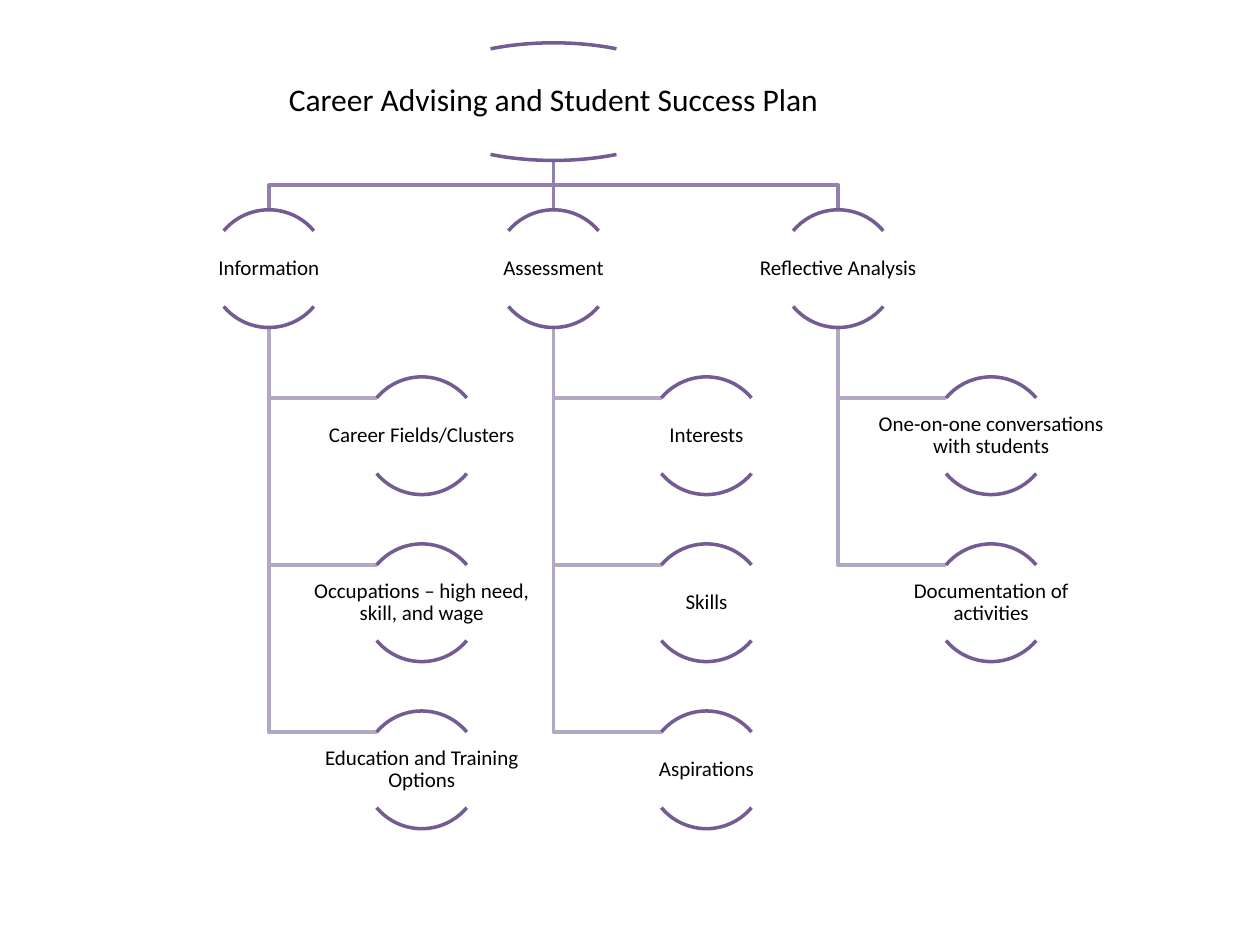
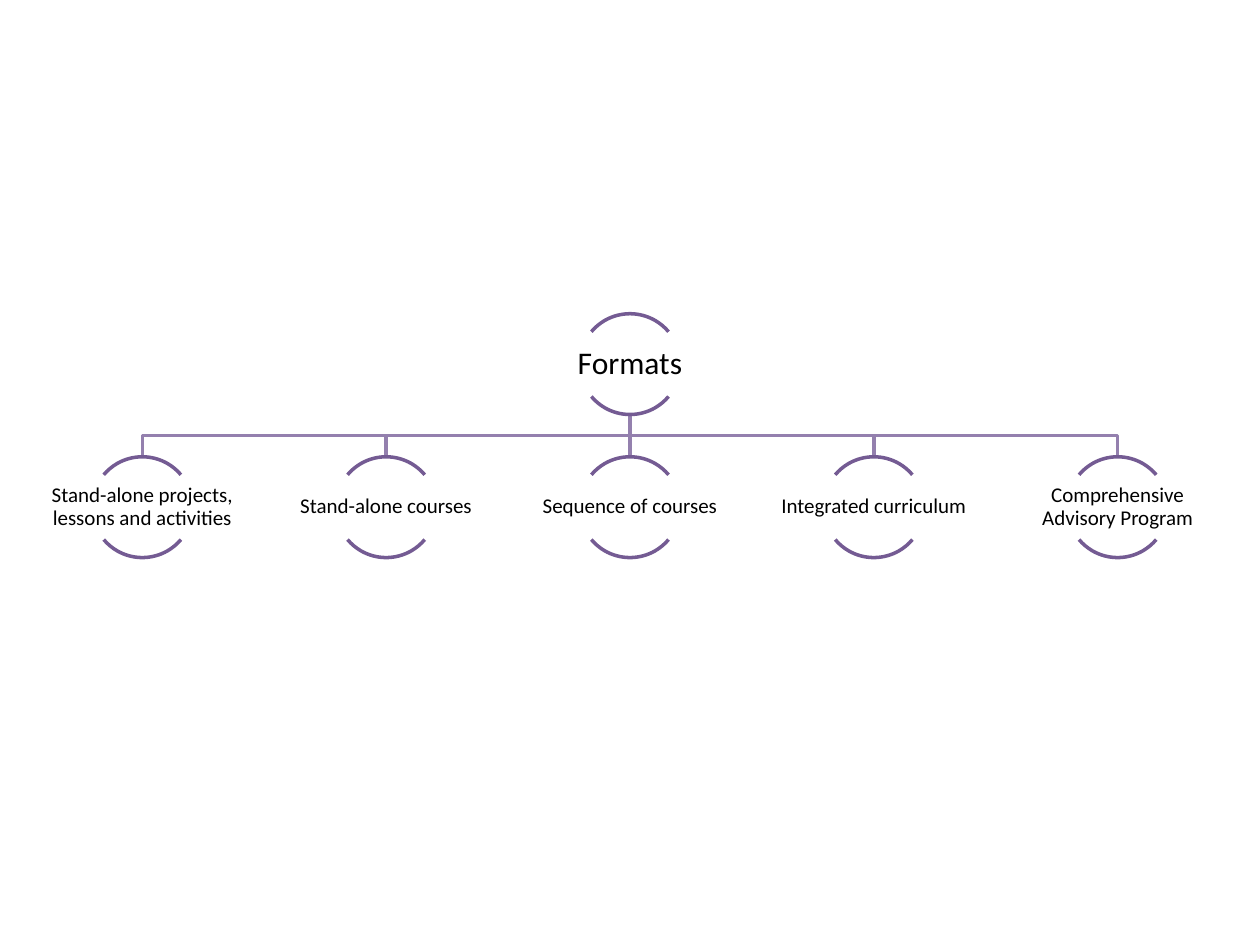
from pptx import Presentation
from pptx.dml.color import RGBColor
from pptx.enum.shapes import MSO_CONNECTOR, MSO_SHAPE
from pptx.enum.text import MSO_ANCHOR, PP_ALIGN
from pptx.oxml.ns import qn
from pptx.util import Inches, Pt
from lxml import etree

ARC = MSO_SHAPE.ARC
STRAIGHT = MSO_CONNECTOR.STRAIGHT
MIDDLE = MSO_ANCHOR.MIDDLE
CENTER = PP_ALIGN.CENTER

ARC_COLOR = RGBColor(0x74, 0x5B, 0x93)
BRANCH_COLOR = RGBColor(0x94, 0x80, 0xAE)
LEAF_COLOR = RGBColor(0xB3, 0xA8, 0xC4)
TEXT_COLOR = RGBColor(0x00, 0x00, 0x00)
FONT = "Calibri"
LINE_WIDTH = Pt(2)
TEXT_INSET = Inches(0.01)
ROOT_SIZE, NODE_SIZE = Pt(18), Pt(12)

UNIT = Inches(0.1)

# Proportions of a chart, in node diameters.
COLUMN_PITCH = 2.42
ROW_PITCH = 1.42
LEAF_INDENT = 1.3
LABEL_WIDTH = 2
LABEL_TOP = 0.18
ARC_HALF_CHORD = 0.38
ARC_ANGLES = ((132, 192), (24, 84))

PLAN = ("Career Advising and Student Success Plan", [
    ("Information", ["Career Fields/Clusters",
                     "Occupations – high need, skill, and wage",
                     "Education and Training Options"]),
    ("Assessment", ["Interests", "Skills", "Aspirations"]),
    ("Reflective Analysis", ["One-on-one conversations with students",
                             "Documentation of activities"]),
])
FORMATS = ("Formats", [
    ("Stand-alone projects, lessons and activities", []),
    ("Stand-alone courses", []),
    ("Sequence of courses", []),
    ("Integrated curriculum", []),
    ("Comprehensive Advisory Program", []),
])


def style_line(line, color):
    """Give a line its colour and the shared width."""
    line.color.rgb = color
    line.width = LINE_WIDTH


def add_link(s, points, color):
    """Draw a line through points, straight or with elbows."""
    points = [(round(x), round(y)) for x, y in points]
    if len(points) == 2:
        link = s.shapes.add_connector(STRAIGHT, *points[0], *points[1])
        etree.SubElement(link._element.spPr, qn("a:effectLst"))
    else:
        builder = s.shapes.build_freeform(*points[0])
        builder.add_line_segments(points[1:], close=False)
        link = builder.convert_to_shape()
        link.fill.background()
        link.shadow.inherit = False
    style_line(link.line, color)


def add_node(s, x, top, size, text, font_size=NODE_SIZE, stretch=1):
    """Draw a label between two arcs, centred on x."""
    width = size * stretch
    for angles in ARC_ANGLES:
        arc = s.shapes.add_shape(ARC, round(x - width / 2), round(top),
                                 round(width), round(size))
        arc.adjustments[0], arc.adjustments[1] = angles
        arc.shadow.inherit = False
        arc.fill.background()
        style_line(arc.line, ARC_COLOR)

    label_width = width * LABEL_WIDTH
    label = s.shapes.add_textbox(round(x - label_width / 2),
                                 round(top + size * LABEL_TOP),
                                 round(label_width),
                                 round(size * (1 - 2 * LABEL_TOP)))
    tf = label.text_frame
    tf.word_wrap = True
    tf.vertical_anchor = MIDDLE
    tf.margin_left = tf.margin_right = TEXT_INSET
    tf.margin_top = tf.margin_bottom = TEXT_INSET
    p = tf.paragraphs[0]
    p.text = text
    p.alignment = CENTER
    p.line_spacing = 0.9
    p.font.name = FONT
    p.font.size = font_size
    p.font.color.rgb = TEXT_COLOR


def add_tree(s, left, top, width, tree, root_stretch=1):
    """Fit a tree of root, branches and leaves to a box of the given width."""
    root, branches = tree
    span = (len(branches) - 1) * COLUMN_PITCH
    indent = LEAF_INDENT if any(leaves for _, leaves in branches) else 0
    size = width / (LABEL_WIDTH + span + indent)
    first_x = left + size * LABEL_WIDTH / 2
    root_x = first_x + size * span / 2
    root_bottom = top + size
    branch_top = top + size * ROW_PITCH
    bus_y = (root_bottom + branch_top) / 2
    nodes = [(root_x, top, size, root, ROOT_SIZE, root_stretch)]

    for i, (branch, leaves) in enumerate(branches):
        x = first_x + i * size * COLUMN_PITCH
        is_straight = abs(x - root_x) < 1
        elbows = [] if is_straight else [(root_x, bus_y), (x, bus_y)]
        add_link(s, [(root_x, root_bottom), *elbows, (x, branch_top)], BRANCH_COLOR)
        nodes.append((x, branch_top, size, branch))
        leaf_x = x + size * LEAF_INDENT
        for row, leaf in enumerate(leaves, 1):
            leaf_top = branch_top + row * size * ROW_PITCH
            link_y = leaf_top + size * LABEL_TOP
            add_link(s, [(x, branch_top + size), (x, link_y),
                         (leaf_x - size * ARC_HALF_CHORD, link_y)], LEAF_COLOR)
            nodes.append((leaf_x, leaf_top, size, leaf))

    for node in nodes:
        add_node(s, *node)


def main():
    """Build both tree slides and save them."""
    prs = Presentation()
    prs.slide_width, prs.slide_height = 100 * UNIT, 75 * UNIT
    blank = prs.slide_layouts[6]
    add_tree(prs.slides.add_slide(blank), 12 * UNIT, 3.4 * UNIT, 76 * UNIT,
             PLAN, root_stretch=2.43)
    add_tree(prs.slides.add_slide(blank), 3.3 * UNIT, 24.9 * UNIT, 93.4 * UNIT,
             FORMATS)
    prs.save("out.pptx")


if __name__ == "__main__":
    main()
